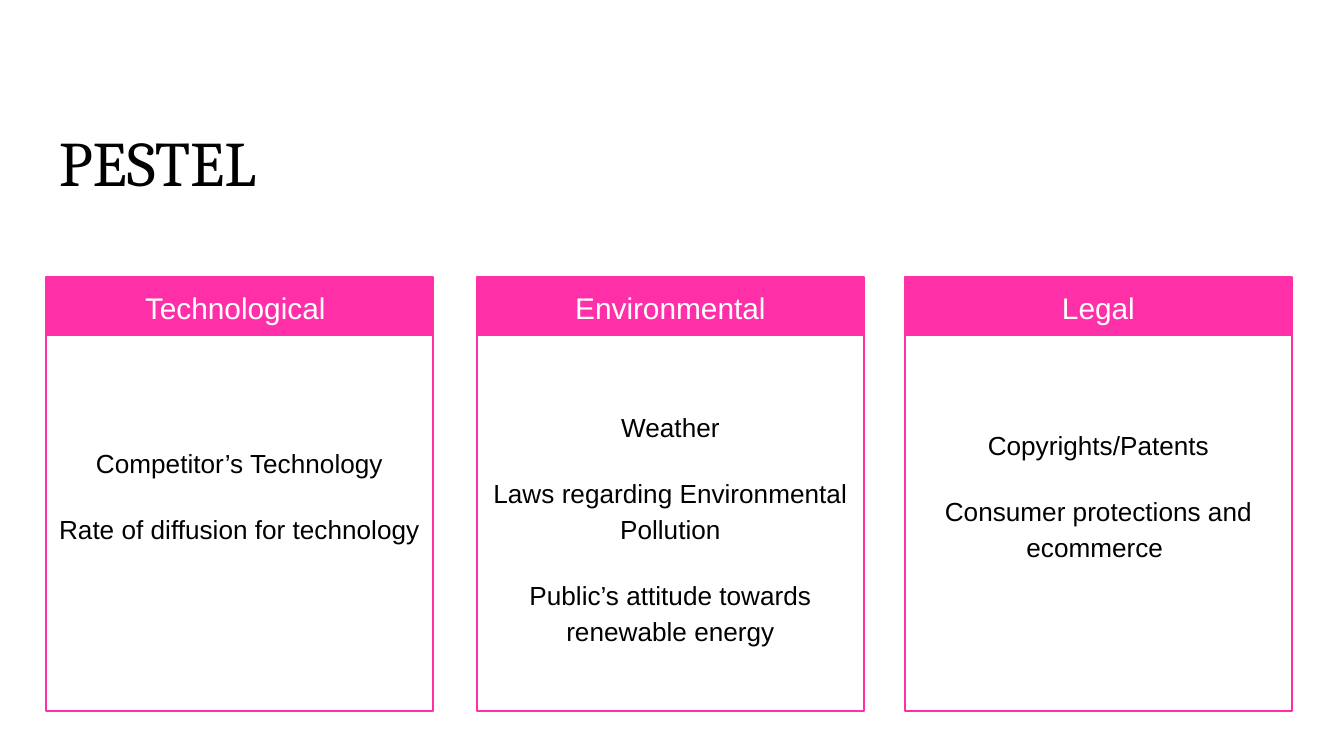
from dataclasses import dataclass

from pptx import Presentation
from pptx.dml.color import RGBColor as RGB
from pptx.enum.shapes import MSO_SHAPE as SHAPE
from pptx.enum.text import MSO_ANCHOR as ANCHOR, PP_ALIGN as ALIGN
from pptx.util import Pt

PX = 6804  # EMU per px


@dataclass(frozen=True)
class Theme:
    pink: RGB = RGB(0xFF, 0x2F, 0xA7)
    black: RGB = RGB(0, 0, 0)
    white: RGB = RGB(0xFF, 0xFF, 0xFF)
    title_font: str = "Cambria"
    body_font: str = "Arial"
    title_size: int = 34
    header_size: int = 16
    body_size: int = 14
    inset: int = 13


def set_all(obj, **values):
    for name, value in values.items():
        setattr(obj, name, value)


class SlideBuilder:
    def __init__(self, slide, theme):
        self.slide, self.theme = slide, theme

    def add_text(self, sp, lines, font, size, color, align, anchor=ANCHOR.TOP,
                 top_inset=None, spacing=None, gap=0):
        """Fill a shape with paragraphs set gap points apart."""
        tf, inset = sp.text_frame, self.theme.inset * PX
        top = inset if top_inset is None else top_inset * PX
        set_all(tf, word_wrap=True, vertical_anchor=anchor, margin_left=inset,
                margin_right=inset, margin_top=top, margin_bottom=inset)
        for i, line in enumerate(lines):
            p = tf.add_paragraph() if i else tf.paragraphs[0]
            set_all(p, alignment=align, line_spacing=spacing,
                    space_before=Pt(gap if i else 0))
            r = p.add_run()
            r.text = line
            set_all(r.font, name=font, size=Pt(size))
            r.font.color.rgb = color

    def title(self, text, x, y, w, h):
        t = self.theme
        sp = self.slide.shapes.add_textbox(x * PX, y * PX, w * PX, h * PX)
        self.add_text(sp, [text], t.title_font, t.title_size, t.black,
                      ALIGN.LEFT)

    def rect(self, shapes, x, y, w, h, fill=None, line=None):
        sp = shapes.add_shape(SHAPE.RECTANGLE, x * PX, y * PX, w * PX, h * PX)
        sp.shadow.inherit = False
        if fill is None:
            sp.fill.background()
        else:
            sp.fill.solid()
            sp.fill.fore_color.rgb = fill
        if line is None:
            sp.line.fill.background()
        else:
            sp.line.color.rgb = line
            sp.line.width = Pt(0.75)
        return sp

    def card(self, heading, lines, x, y, w, h, header_h, drop=0):
        """Draw a headed card; drop lowers its centred body text."""
        t = self.theme
        shapes = self.slide.shapes.add_group_shape().shapes
        header = self.rect(shapes, x, y, w, header_h, fill=t.pink)
        self.add_text(header, [heading], t.body_font, t.header_size, t.white,
                      ALIGN.CENTER)
        body = self.rect(shapes, x, y, w, h, line=t.pink)
        self.add_text(body, lines, t.body_font, t.body_size, t.black,
                      ALIGN.CENTER, ANCHOR.MIDDLE, t.inset + 2 * drop, 1.15, 16)


CARDS = [
    (46, "Technological ", 0,
     ["Competitor’s Technology", "Rate of diffusion for technology"]),
    (477, "Environmental", 33,
     ["Weather", "Laws regarding Environmental Pollution",
      "Public’s attitude towards renewable energy"]),
    (905, "Legal", 0,
     ["Copyrights/Patents", "Consumer protections and ecommerce "]),
]


def main():
    prs = Presentation()
    set_all(prs, slide_width=1344 * PX, slide_height=756 * PX)
    s = SlideBuilder(prs.slides.add_slide(prs.slide_layouts[6]), Theme())
    s.title("PESTEL", 46, 110, 1252, 85)
    for x, heading, drop, lines in CARDS:
        s.card(heading, lines, x, 277, 387, 434, 59, drop)
    prs.save("out.pptx")


if __name__ == "__main__":
    main()
